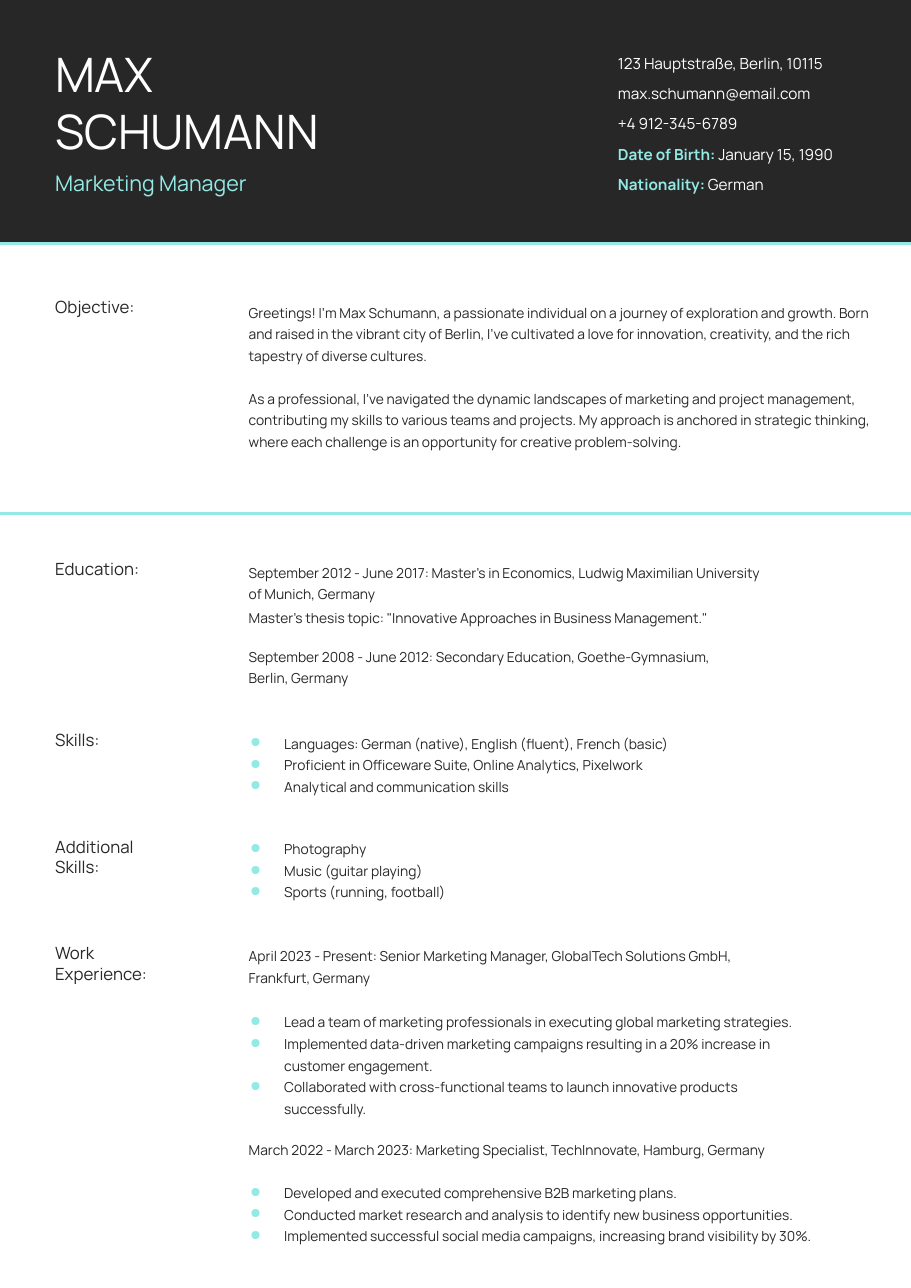
from dataclasses import dataclass

from lxml import etree
from pptx import Presentation
from pptx.dml.color import RGBColor
from pptx.enum.shapes import MSO_CONNECTOR, MSO_SHAPE
from pptx.enum.text import MSO_AUTO_SIZE
from pptx.oxml.ns import qn
from pptx.slide import Slide
from pptx.text.text import _Paragraph as Paragraph
from pptx.util import Inches, Pt

RECTANGLE = MSO_SHAPE.RECTANGLE
STRAIGHT = MSO_CONNECTOR.STRAIGHT
GROW = MSO_AUTO_SIZE.SHAPE_TO_FIT_TEXT
BLANK_LAYOUT = 6
SLIDE_WIDTH, SLIDE_HEIGHT = Inches(8.27), Inches(11.69)


@dataclass(frozen=True)
class TextStyle:
    size: float
    color: str
    spacing: float = 1.0


@dataclass(frozen=True)
class Theme:
    font: str = "Manrope"
    dark: str = "272727"
    accent: str = "93E9E4"
    light: str = "FFFFFF"
    rule_width: float = 1.5
    name: TextStyle = TextStyle(31, light)
    role: TextStyle = TextStyle(14, accent)
    contact: TextStyle = TextStyle(10, light)
    heading: TextStyle = TextStyle(11, dark)
    body: TextStyle = TextStyle(9, dark, 1.3)


THEME = Theme()


@dataclass(frozen=True)
class Column:
    """Left edge and width in percent of the slide width."""
    left: float
    width: float


TITLE = Column(6.05, 39.9)
LABEL = Column(6.05, 18.38)
CONTACT = Column(67.84, 30.23)
BODY = Column(27.3, 69.29)
BULLETS = Column(25.15, 71.58)
BULLET_INDENT, BULLET_HANG = 6.05, 3.75

HEADER_HEIGHT = 18.82
RULE_TOPS = (18.91, 39.86)
CONTACT_TOP, CONTACT_STEP = 4.19, 2.35


@dataclass(frozen=True)
class Block:
    """Text in a column; top is in percent of the slide height, gap in points."""
    column: Column
    top: float
    paragraphs: tuple[str, ...]
    style: TextStyle = THEME.body
    gap: float = 0


CONTACTS = (
    ("", "123 Hauptstraße, Berlin, 10115"),
    ("", "max.schumann@email.com"),
    ("", "+4 912-345-6789"),
    ("Date of Birth:", " January 15, 1990"),
    ("Nationality: ", "German"),
)

BLOCKS = (
    Block(TITLE, 3.51, ("MAX", "SCHUMANN"), THEME.name),
    Block(TITLE, 13.17, ("Marketing Manager",), THEME.role),
    Block(LABEL, 23.01, ("Objective:",), THEME.heading),
    Block(BODY, 23.27, (
        "Greetings! I'm Max Schumann, a passionate individual on a journey of exploration and growth. "
        "Born and raised in the vibrant city of Berlin, I've cultivated a love for innovation, "
        "creativity, and the rich tapestry of diverse cultures.",
        "As a professional, I've navigated the dynamic landscapes of marketing and project management, "
        "contributing my skills to various teams and projects. My approach is anchored in strategic "
        "thinking, where each challenge is an opportunity for creative problem-solving.",
    ), gap=14),
    Block(LABEL, 43.37, ("Education:",), THEME.heading),
    Block(BODY, 43.46, (
        "September 2012 - June 2017: Master's in Economics, Ludwig Maximilian University",
        "of Munich, Germany")),
    Block(BODY, 46.96, (
        "Master's thesis topic: \"Innovative Approaches in Business Management.\"",)),
    Block(BODY, 49.96, (
        "September 2008 - June 2012: Secondary Education, Goethe-Gymnasium,",
        "Berlin, Germany")),
    Block(LABEL, 56.63, ("Skills:",), THEME.heading),
    Block(BULLETS, 56.72, (
        "Languages: German (native), English (fluent), French (basic)",
        "Proficient in Officeware Suite, Online Analytics, Pixelwork",
        "Analytical and communication skills")),
    Block(LABEL, 64.93, ("Additional", "Skills:"), THEME.heading),
    Block(BULLETS, 64.93, (
        "Photography", "Music (guitar playing)", "Sports (running, football)")),
    Block(LABEL, 73.22, ("Work", "Experience:"), THEME.heading),
    Block(BODY, 73.22, (
        "April 2023 - Present: Senior Marketing Manager, GlobalTech Solutions GmbH,",
        "Frankfurt, Germany")),
    Block(BULLETS, 78.36, (
        "Lead a team of marketing professionals in executing global marketing strategies.",
        "Implemented data-driven marketing campaigns resulting in a 20% increase in\v"
        "customer engagement.",
        "Collaborated with cross-functional teams to launch innovative products\v"
        "successfully.")),
    Block(BODY, 88.28, (
        "March 2022 - March 2023: Marketing Specialist, TechInnovate, Hamburg, Germany",)),
    Block(BULLETS, 91.62, (
        "Developed and executed comprehensive B2B marketing plans.",
        "Conducted market research and analysis to identify new business opportunities.",
        "Implemented successful social media campaigns, increasing brand visibility by 30%.")),
)


def across(percent: float) -> int:
    return round(SLIDE_WIDTH * percent / 100)


def down(percent: float) -> int:
    return round(SLIDE_HEIGHT * percent / 100)


def color(value: str) -> RGBColor:
    return RGBColor.from_string(value)


def add_bullet(paragraph: Paragraph) -> None:
    properties = paragraph._p.get_or_add_pPr()
    properties.set("marL", str(across(BULLET_INDENT)))
    properties.set("indent", str(-across(BULLET_HANG)))
    bullet_color = etree.Element(qn("a:buClr"))
    etree.SubElement(bullet_color, qn("a:srgbClr"), val=THEME.accent)
    bullet = etree.Element(qn("a:buChar"), char="●")
    font_defaults = properties.find(qn("a:defRPr"))
    for element in (bullet_color, bullet):
        font_defaults.addprevious(element)


def add_block(slide: Slide, block: Block) -> list[Paragraph]:
    style = block.style
    line_count = sum(text.count("\v") + 1 for text in block.paragraphs)
    height = Pt(line_count * style.size * style.spacing * 1.2)
    box = slide.shapes.add_textbox(
        across(block.column.left), down(block.top), across(block.column.width), height)
    frame = box.text_frame
    frame.margin_left = frame.margin_top = frame.margin_right = frame.margin_bottom = 0
    frame.word_wrap = True
    frame.auto_size = GROW
    frame.text = "\n".join(block.paragraphs)
    for index, paragraph in enumerate(frame.paragraphs):
        paragraph.font.name = THEME.font
        paragraph.font.size = Pt(style.size)
        paragraph.font.color.rgb = color(style.color)
        paragraph.line_spacing = style.spacing
        if index and block.gap:
            paragraph.space_before = Pt(block.gap)
        if block.column is BULLETS:
            add_bullet(paragraph)
    return list(frame.paragraphs)


def add_contacts(slide: Slide) -> None:
    for row, (label, value) in enumerate(CONTACTS):
        block = Block(CONTACT, CONTACT_TOP + row * CONTACT_STEP, (label or value,), THEME.contact)
        paragraph = add_block(slide, block)[0]
        if label:
            label_font = paragraph.runs[0].font
            label_font.bold = True
            label_font.color.rgb = color(THEME.accent)
            paragraph.add_run().text = value


def add_header(slide: Slide) -> None:
    header = slide.shapes.add_shape(RECTANGLE, 0, 0, SLIDE_WIDTH, down(HEADER_HEIGHT))
    header.shadow.inherit = False
    header.fill.solid()
    header.fill.fore_color.rgb = color(THEME.dark)
    header.line.fill.background()


def add_rule(slide: Slide, top: float) -> None:
    rule = slide.shapes.add_connector(STRAIGHT, 0, down(top), SLIDE_WIDTH, down(top))
    rule.line.color.rgb = color(THEME.accent)
    rule.line.width = Pt(THEME.rule_width)
    etree.SubElement(rule._element.spPr, qn("a:effectLst"))


def main() -> None:
    presentation = Presentation()
    presentation.slide_width, presentation.slide_height = SLIDE_WIDTH, SLIDE_HEIGHT
    slide = presentation.slides.add_slide(presentation.slide_layouts[BLANK_LAYOUT])
    add_header(slide)
    for top in RULE_TOPS:
        add_rule(slide, top)
    add_contacts(slide)
    for block in BLOCKS:
        add_block(slide, block)
    presentation.save("out.pptx")


if __name__ == "__main__":
    main()
